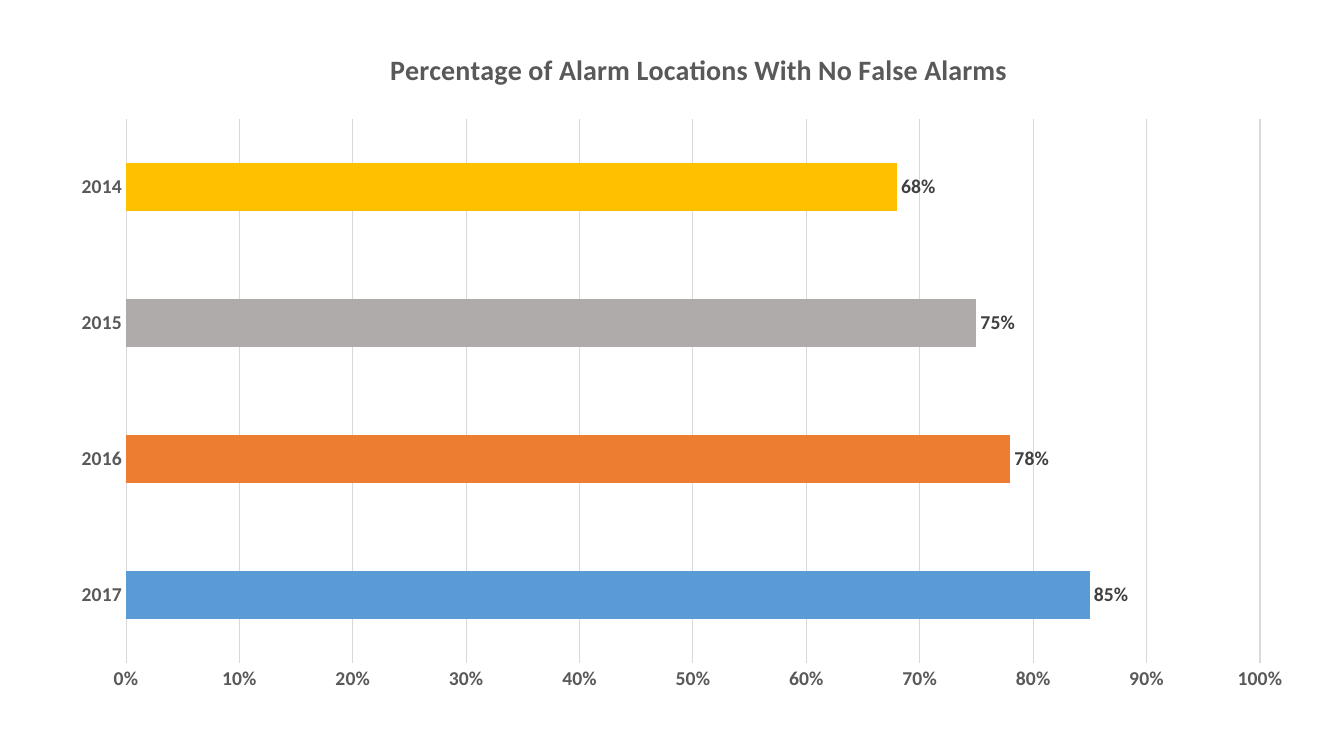
from lxml import etree
from pptx import Presentation
from pptx.chart.data import CategoryChartData
from pptx.dml.color import RGBColor
from pptx.enum.chart import XL_CHART_TYPE, XL_LABEL_POSITION, XL_TICK_MARK
from pptx.oxml.ns import qn
from pptx.util import Pt

BAR_CLUSTERED = XL_CHART_TYPE.BAR_CLUSTERED
OUTSIDE_END = XL_LABEL_POSITION.OUTSIDE_END
NO_TICK = XL_TICK_MARK.NONE

PX = 914400 / 100.8
SLIDE_SIZE = (1344, 756)
CHART_BOX = (56, 35, 1251, 669)
PLOT_BOX = (70, 84, 1134, 544)
TITLE_SPOT = (329, 10)
FONT = "Calibri"
COLORS = {
    "text": "595959",
    "label": "404040",
    "grid": "D9D9D9",
    "2017": "5B9BD5",
    "2016": "ED7D31",
    "2015": "AFABAB",
    "2014": "FFC000",
}
TITLE = "Percentage of Alarm Locations With No False Alarms"
RATES = {"2017": 0.85, "2016": 0.78, "2015": 0.75, "2014": 0.68}


def px(length):
    return round(length * PX)


def rgb(name):
    return RGBColor.from_string(COLORS[name])


def format_font(font, size=14, color="text", bold=True):
    font.name = FONT
    font.size = Pt(size)
    font.bold = bold
    font.color.rgb = rgb(color)


def write_text(frame, text, **style):
    frame.text = text
    format_font(frame.paragraphs[0].runs[0].font, **style)


def draw_line(line, color="grid"):
    line.width = Pt(0.75)
    line.color.rgb = rgb(color)


def place_part(part, box, chart_size, inner=False):
    layout = part.find(qn("c:layout"))
    if layout is None:
        layout = etree.Element(qn("c:layout"))
        part.insert(0, layout)
    manual = etree.SubElement(layout, qn("c:manualLayout"))
    settings = [("layoutTarget", "inner")] if inner else []
    settings += [("xMode", "edge"), ("yMode", "edge")]
    for name, length, whole in zip("xywh", box, chart_size * 2):
        settings.append((name, f"{length / whole:.4f}"))
    for name, value in settings:
        etree.SubElement(manual, qn(f"c:{name}")).set("val", value)


def style_axes(chart):
    years, rates = chart.category_axis, chart.value_axis
    for axis in (years, rates):
        axis.major_tick_mark = NO_TICK
        axis.minor_tick_mark = NO_TICK
        format_font(axis.tick_labels.font)
    years.has_major_gridlines = False
    draw_line(years.format.line)
    rates.minimum_scale = 0
    rates.maximum_scale = 1
    rates.major_unit = 0.1
    rates.tick_labels.number_format = "0%"
    rates.tick_labels.number_format_is_linked = False
    rates.format.line.fill.background()
    rates.has_major_gridlines = True
    draw_line(rates.major_gridlines.format.line)


def style_bars(plot):
    plot.gap_width = 182
    plot.vary_by_categories = False
    bars = plot.series[0]
    bars.invert_if_negative = False
    bars.format.fill.solid()
    bars.format.fill.fore_color.rgb = rgb("2014")
    for index, year in enumerate(RATES):
        fill = bars.points[index].format.fill
        fill.solid()
        fill.fore_color.rgb = rgb(year)
    labels = bars.data_labels
    labels.show_value = True
    labels.position = OUTSIDE_END
    labels.number_format = "0%"
    labels.number_format_is_linked = False
    format_font(labels.font, color="label")


def add_alarm_chart(slide, box):
    alarm_data = CategoryChartData(number_format="0%")
    alarm_data.categories = list(RATES)
    alarm_data.add_series(TITLE, list(RATES.values()))
    frame = slide.shapes.add_chart(BAR_CLUSTERED, *map(px, box), alarm_data)
    chart = frame.chart
    chart.font.name = FONT
    chart.font.size = Pt(10)
    chart.has_legend = False
    chart.has_title = True
    write_text(chart.chart_title.text_frame, TITLE, size=20)
    style_axes(chart)
    style_bars(chart.plots[0])
    chart_root = chart.element
    place_part(chart_root.find(".//" + qn("c:title")), TITLE_SPOT, box[2:])
    place_part(chart_root.find(".//" + qn("c:plotArea")), PLOT_BOX, box[2:], inner=True)


def main():
    deck = Presentation()
    deck.slide_width, deck.slide_height = map(px, SLIDE_SIZE)
    slide = deck.slides.add_slide(deck.slide_layouts[6])
    add_alarm_chart(slide, CHART_BOX)
    deck.save("out.pptx")


if __name__ == "__main__":
    main()
